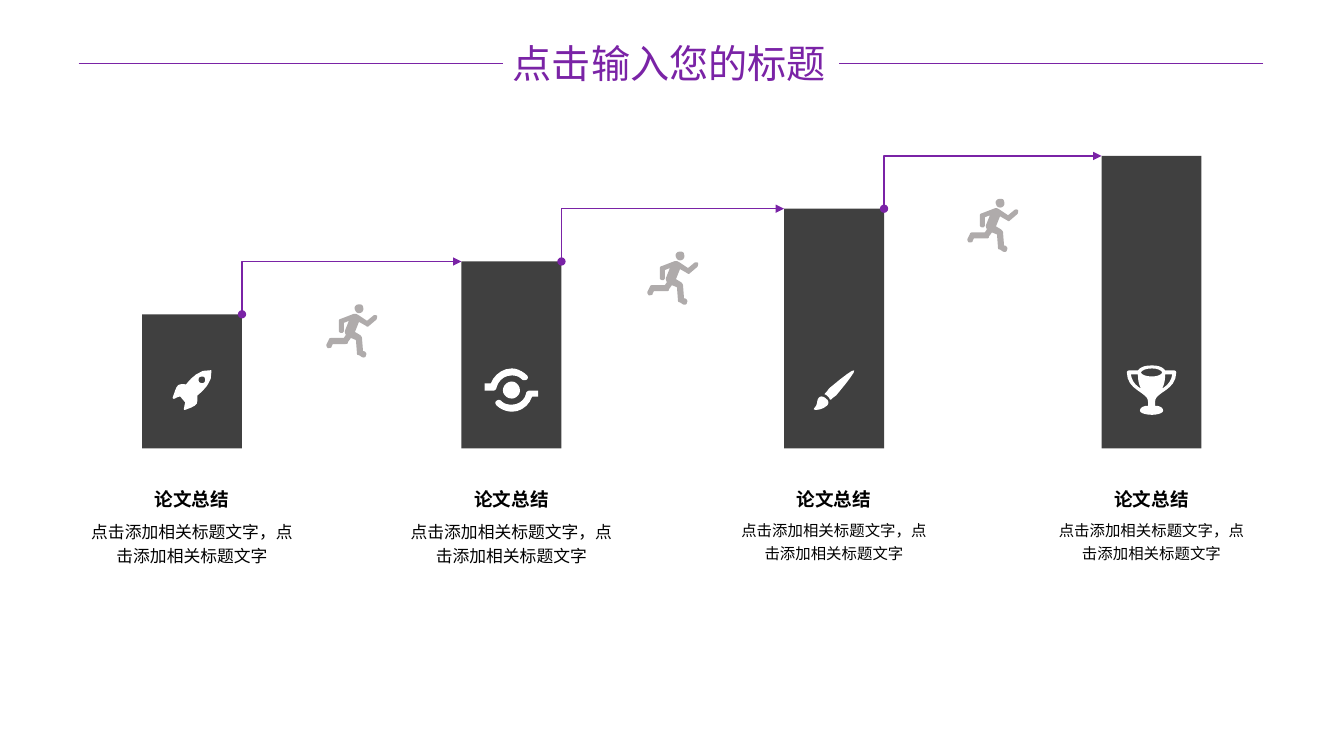
from pptx import Presentation
from pptx.dml.color import RGBColor
from pptx.enum.shapes import MSO_CONNECTOR as Link, MSO_SHAPE as Kind
from pptx.enum.text import MSO_ANCHOR as Anchor, MSO_AUTO_SIZE as Fit, PP_ALIGN as Align
from pptx.oxml.ns import qn
from pptx.util import Cm, Pt
from lxml.etree import SubElement as Sub

FONT = "Noto Sans CJK SC"
PURPLE, DARK, GREY, WHITE, BLACK = "7A23A6", "404040", "AFABAB", "FFFFFF", "000000"
UNIT = Cm(2.54) / 100  # one step of the icon grids
FINE = 100  # parts of a step kept when curves are cut into lines

# An outline is a list of contours: a start point, then lines (x, y)
# and cubic curves (x1, y1, x2, y2, x, y).
RUNNER = [
    [(34, 9), (36, 8, 37, 6, 36, 3), (36, 1, 33, 0, 30, 1), (28, 2, 27, 4, 28, 6),
     (29, 9, 31, 10, 34, 9)],
    [(50, 12), (49, 11, 47, 11, 46, 12), (40, 17), (31, 11), (29, 10), (27, 10), (14, 15),
     (13, 15, 12, 16, 12, 17), (12, 27), (12, 28, 13, 29, 15, 29), (16, 29, 17, 28, 17, 27),
     (17, 19), (22, 17), (18, 27), (18, 28, 18, 29, 19, 31), (17, 34), (4, 34),
     (3, 34, 2, 35, 2, 36), (0, 40), (-1, 41, 0, 43, 1, 44), (3, 44, 5, 44, 5, 42), (6, 40),
     (18, 40), (20, 40, 21, 40, 21, 38), (24, 34), (29, 36), (30, 49),
     (30, 50, 30, 51, 32, 51), (35, 53), (37, 54, 39, 53, 39, 51), (40, 50, 39, 48, 37, 47),
     (36, 47), (35, 34), (35, 33, 34, 32, 33, 31), (28, 28), (32, 18), (39, 22),
     (40, 23, 41, 23, 42, 22), (49, 16), (50, 15, 50, 13, 50, 12)],
]
ROCKET = [
    [(27, 12), (26, 11, 26, 8, 27, 7), (29, 6, 31, 6, 32, 7), (33, 8, 33, 11, 32, 12),
     (31, 13, 29, 13, 27, 12)],
    [(25, 25), (25, 25, 41, 14, 39, 1), (39, 0, 39, 0, 38, 0), (25, -2, 14, 14, 14, 14),
     (4, 13, 5, 15, 1, 26), (0, 28, 1, 29, 3, 28), (4, 27, 8, 26, 8, 26), (13, 32),
     (13, 32, 12, 36, 12, 37), (11, 39, 12, 40, 14, 39), (24, 35, 26, 35, 25, 25)],
]
CYCLE = [
    [(45, 22), (42, 22, 41, 24, 41, 25), (40, 31, 34, 36, 27, 36), (22, 36, 19, 35, 16, 32),
     (15, 31, 13, 31, 12, 32), (10, 33, 10, 35, 12, 37), (15, 40, 21, 43, 27, 43),
     (36, 43, 44, 37, 47, 28), (53, 28), (53, 22)],
    [(12, 18), (14, 12, 19, 7, 27, 7), (31, 7, 34, 8, 37, 11), (38, 12, 40, 12, 42, 11),
     (43, 10, 43, 8, 42, 7), (38, 3, 32, 0, 27, 0), (17, 0, 9, 7, 6, 15), (0, 15), (0, 22),
     (9, 22), (11, 22, 12, 19, 12, 18)],
    [(18, 22), (18, 26, 22, 30, 27, 30), (31, 30, 35, 26, 35, 22), (35, 17, 31, 13, 27, 13),
     (22, 13, 18, 17, 18, 22)],
]
BRUSH = [
    [(40, 0), (39, -2, 21, 13, 15, 18), (13, 21, 12, 22, 11, 23), (10, 24, 11, 24, 11, 24),
     (12, 24, 13, 25, 14, 26), (15, 27, 15, 27, 16, 29), (16, 29, 16, 29, 17, 29),
     (18, 28, 19, 27, 22, 25), (27, 19, 42, 1, 40, 0)],
    [(5, 27), (2, 30, 5, 33, 0, 38), (-2, 40, 8, 40, 13, 35), (15, 33, 15, 30, 12, 28),
     (10, 26, 7, 25, 5, 27)],
]
CUP = [
    [(4, 9), (11, 9), (11, 15, 12, 19, 14, 23), (9, 20, 5, 16, 4, 9)],
    [(25, 3), (32, 3, 35, 6, 35, 7), (35, 8, 32, 11, 25, 11), (17, 11, 14, 8, 14, 7),
     (14, 6, 17, 3, 25, 3)],
    [(35, 23), (37, 19, 38, 15, 38, 9), (45, 9), (44, 16, 40, 20, 35, 23)],
    [(28, 36), (28, 32, 31, 30, 35, 27), (41, 23, 49, 18, 49, 7), (49, 6, 48, 5, 47, 5),
     (38, 5), (36, 2, 32, 0, 25, 0), (17, 0, 13, 2, 11, 5), (2, 5), (1, 5, 0, 6, 0, 7),
     (0, 18, 8, 23, 14, 27), (18, 30, 21, 32, 21, 36), (21, 40), (16, 40, 13, 42, 13, 45),
     (13, 47, 18, 49, 25, 49), (31, 49, 36, 47, 36, 45), (36, 42, 33, 40, 28, 40)],
]

# left edge of the bar (cm), icon, size of the note (pt)
STEPS = [(3.58, ROCKET, 12), (11.63, CYCLE, 12), (19.76, BRUSH, 11), (27.76, CUP, 11)]
WIDE, BASE, FIRST, RISE = 2.52, 11.3, 7.92, 1.33


def rgb(code):
    return RGBColor.from_string(code)


def paint(shape, code):
    shape.shadow.inherit = False
    shape.fill.solid()
    shape.fill.fore_color.rgb = rgb(code)
    shape.line.fill.background()


def write(para, text, size, code, bold=False):
    run = para.add_run()
    run.text = text
    font = run.font
    font.name, font.size, font.bold = FONT, Pt(size), bold
    font.color.rgb = rgb(code)
    Sub(font._element, qn("a:ea")).set("typeface", FONT)


def trace(contour):
    """Return the contour as points, its curves cut into short lines."""
    points = [contour[0]]
    for part in contour[1:]:
        if len(part) == 2:
            points.append(part)
            continue
        a, b, c, d = points[-1], part[:2], part[2:4], part[4:]
        for t in (0.2, 0.4, 0.6, 0.8, 1):
            u = 1 - t
            points.append(tuple(u**3 * a[k] + 3 * u * u * t * b[k] + 3 * u * t * t * c[k]
                                + t**3 * d[k] for k in (0, 1)))
    return [(x * FINE, y * FINE) for x, y in points]


def icon(slide, outline, mid, level, code):
    """Draw the outline centred on the point (mid, level)."""
    loops = [trace(contour) for contour in outline]
    pen = slide.shapes.build_freeform(*loops[0][0], scale=UNIT / FINE)
    for i, loop in enumerate(loops):
        if i:
            pen.move_to(*loop[0])
        pen.add_line_segments(loop[1:])
    shape = pen.convert_to_shape()
    paint(shape, code)
    shape.left = Cm(mid) - shape.width // 2
    shape.top = Cm(level) - shape.height // 2


def arrow(slide, left, top, width, height):
    """Draw an elbow that goes up from the lower left, then right."""
    x, y = Cm(left), Cm(top)
    pen = slide.shapes.build_freeform(x, y + Cm(height))
    pen.add_line_segments([(x, y), (x + Cm(width), y)], close=False)
    shape = pen.convert_to_shape()
    shape.shadow.inherit = False
    shape.fill.background()
    shape.line.color.rgb = rgb(PURPLE)
    shape.line.width = Pt(1)
    line = shape.line._get_or_add_ln()
    Sub(line, qn("a:headEnd")).set("type", "oval")
    Sub(line, qn("a:tailEnd")).set("type", "triangle")


def label(slide, left, top, width, height):
    box = slide.shapes.add_textbox(Cm(left), Cm(top), Cm(width), Cm(height))
    frame = box.text_frame
    frame.word_wrap = True
    frame.margin_left = frame.margin_right = Cm(0.1)
    frame.margin_top = frame.margin_bottom = Cm(0.1)
    return frame


def caption(slide, left, top, width, size):
    head = label(slide, left, top, width, 0.97)
    head.word_wrap = False
    head.vertical_anchor = Anchor.MIDDLE
    head.paragraphs[0].alignment = Align.CENTER
    write(head.paragraphs[0], "论文总结", 13.3, BLACK, True)
    note = label(slide, left, top + 0.86, width, 2.18)
    for i, text in enumerate(("点击添加相关标题文字，点", "击添加相关标题文字")):
        para = note.add_paragraph() if i else note.paragraphs[0]
        para.alignment, para.line_spacing = Align.CENTER, 1.2
        write(para, text, size, BLACK)


def step(slide, left, top, width, height, outline, size):
    bar = slide.shapes.add_shape(Kind.RECTANGLE, Cm(left), Cm(top), Cm(width), Cm(height))
    paint(bar, DARK)
    mid, foot = left + width / 2, top + height
    icon(slide, outline, mid, foot - 1.47, WHITE)
    caption(slide, mid - 3.02, foot + 0.79, 6.04, size)


def header(slide, left, top, width, height):
    title = slide.shapes.title
    title.left, title.top, title.width, title.height = Cm(12.67), Cm(top), Cm(8.48), Cm(height)
    frame = title.text_frame
    frame.auto_size, frame.vertical_anchor = Fit.NONE, Anchor.TOP
    frame.paragraphs[0].alignment = Align.LEFT
    write(frame.paragraphs[0], "点击输入您的标题", 28, PURPLE)
    level = Cm(top + height / 2)
    for edge, side in ((left, 1), (left + width, 3)):
        rule = slide.shapes.add_connector(Link.STRAIGHT, Cm(edge), level, Cm(edge), level)
        rule.end_connect(title, side)
        rule.line.color.rgb = rgb(PURPLE)
        rule.line.width = Pt(0.5)
        Sub(rule._element.spPr, qn("a:effectLst"))


def stairs(slide):
    for i, (left, outline, size) in enumerate(STEPS):
        top = FIRST - RISE * i
        step(slide, left, top, WIDE, BASE - top, outline, size)
    for i, (here, then) in enumerate(zip(STEPS, STEPS[1:])):
        start, end, top = here[0] + WIDE, then[0], FIRST - RISE * (i + 1)
        arrow(slide, start, top, end - start, RISE)
        icon(slide, RUNNER, (start + end) / 2, top + 1.75, GREY)


def main():
    deck = Presentation()
    deck.slide_width, deck.slide_height = Cm(33.87), Cm(19.05)
    slide = deck.slides.add_slide(deck.slide_layouts[5])
    header(slide, 1.98, 0.86, 29.85, 1.45)
    stairs(slide)
    deck.save("out.pptx")


if __name__ == "__main__":
    main()
